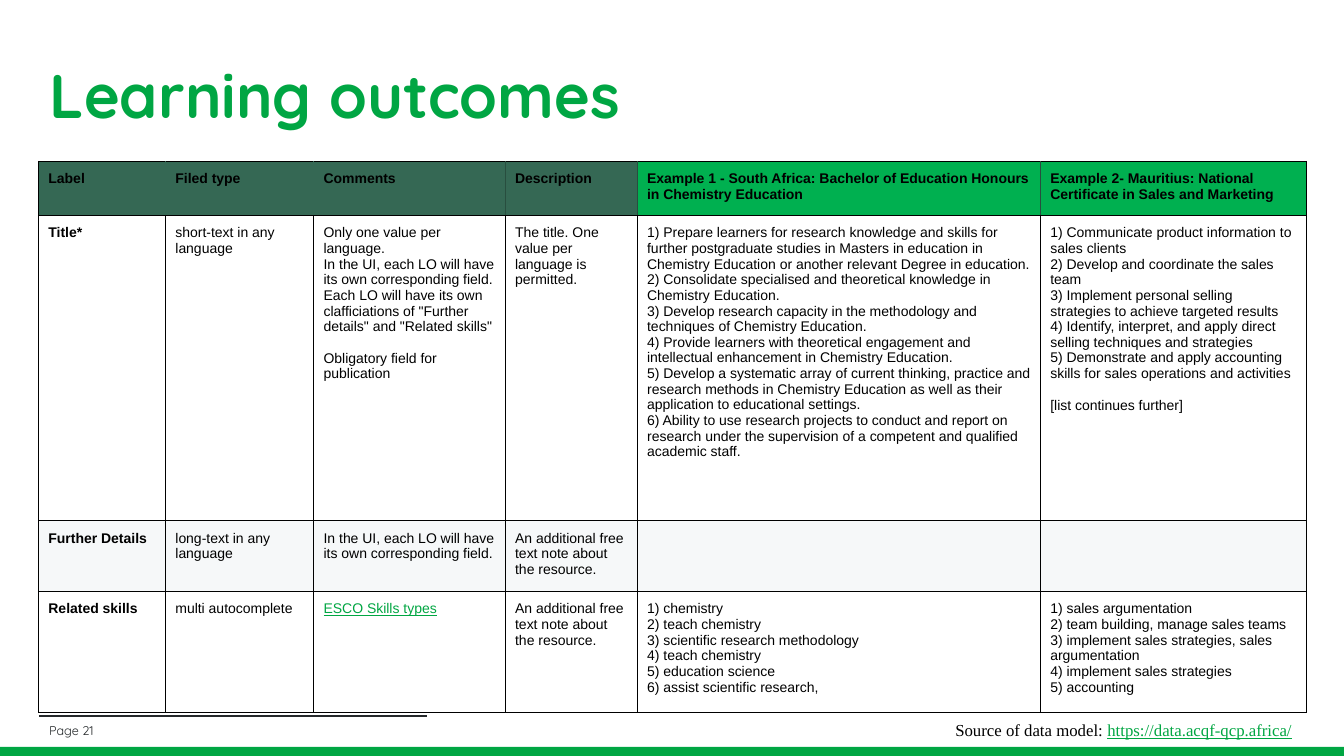
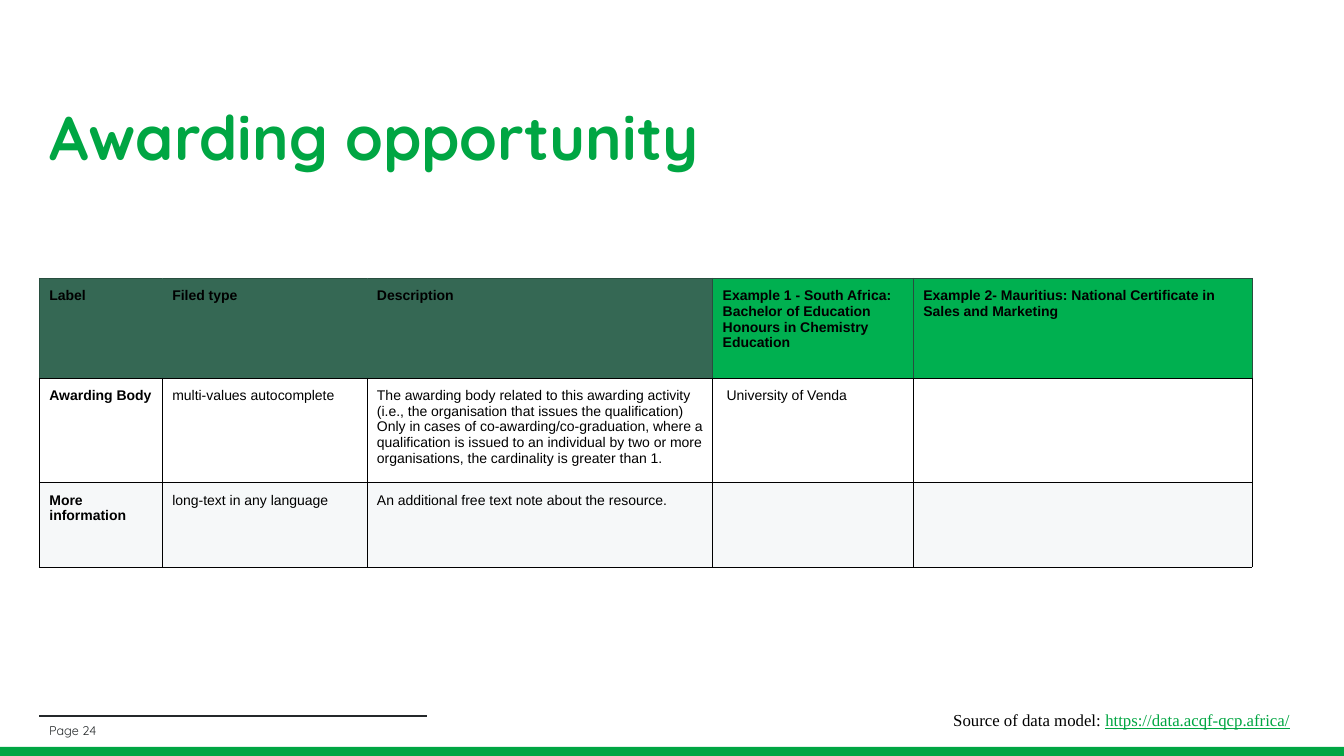
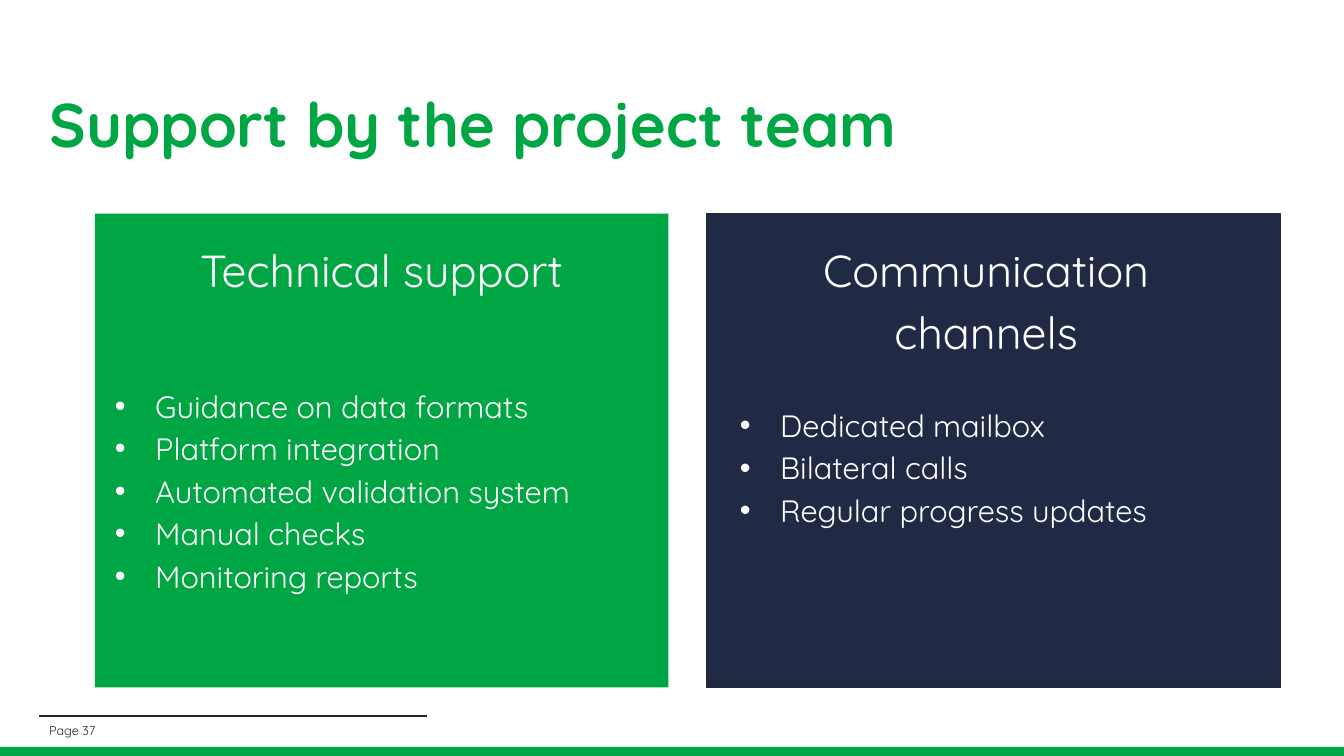
"""Build three slides on a qualification data model and the project team's support."""
from dataclasses import dataclass

import lxml.etree
import pptx
import pptx.dml.color
import pptx.enum.shapes
import pptx.enum.text
import pptx.oxml.ns
import pptx.util

Pt = pptx.util.Pt
RGB = pptx.dml.color.RGBColor.from_string
ALIGN = pptx.enum.text.PP_ALIGN
qn = pptx.oxml.ns.qn


@dataclass(frozen=True)
class Theme:
    green: str = "00A643"
    link: str = "00A642"
    ink: str = "24282A"
    navy: str = "202A44"
    white: str = "FFFFFF"
    black: str = "000000"
    head: str = "356854"
    head_edge: str = "284E3F"
    example: str = "00B050"
    tint: str = "F6F8F9"
    display: str = "Quicksand"
    table: str = "Arial"
    source: str = "Times New Roman"
    title_size: float = 44
    heading_size: float = 32
    list_size: float = 22
    source_size: float = 12
    table_size: float = 10
    page_size: float = 9


theme = Theme()


def style(paragraph, font, size, color, bold=False):
    for run in paragraph.runs:
        run.font.name = font
        run.font.size = Pt(size)
        run.font.bold = bold
        run.font.color.rgb = RGB(color)


def add_border(cell, side, color):
    line = lxml.etree.SubElement(cell._tc.get_or_add_tcPr(), qn(f"a:ln{side}"), w=str(Pt(0.6)))
    fill = lxml.etree.SubElement(line, qn("a:solidFill"))
    lxml.etree.SubElement(fill, qn("a:srgbClr"), val=color)


example_heads = [
    "Example 1 - South Africa: Bachelor of Education Honours in Chemistry Education",
    "Example 2- Mauritius: National Certificate in Sales and Marketing",
]
free_note = "An additional free text note about the resource."
skills_link = "ESCO Skills types"
spaced_notes = ("Obligatory field for publication", "[list continues further]")

table_slides = [
    dict(
        title="Learning outcomes", title_top=31.7, title_height=77, page=21,
        left=27.4, top=115.2, edge=theme.black, source_at=(557.3, 506.9),
        widths=[90.7, 105.9, 136.8, 94.3, 288, 190],
        heights=[38.2, 218.2, 41, 70.6],
        rows=[
            ["Label", "Filed type", "Comments", "Description", *example_heads],
            [
                "Title*",
                "short-text in any language",
                "Only one value per language.\n"
                "In the UI, each LO will have its own corresponding field. Each LO will have its own "
                "clafficiations of \"Further details\" and \"Related skills\"\n"
                "Obligatory field for publication",
                "The title. One value per language is permitted.",
                "1) Prepare learners for research knowledge and skills for further postgraduate studies in "
                "Masters in education in Chemistry Education or another relevant Degree in education.\n"
                "2) Consolidate specialised and theoretical knowledge in Chemistry Education.\n"
                "3) Develop research capacity in the methodology and techniques of Chemistry Education.\n"
                "4) Provide learners with theoretical engagement and intellectual enhancement in "
                "Chemistry Education.\n"
                "5) Develop a systematic array of current thinking, practice and research methods in "
                "Chemistry Education as well as their application to educational settings.\n"
                "6) Ability to use research projects to conduct and report on research under the "
                "supervision of a competent and qualified academic staff.",
                "1) Communicate product information to sales clients\n"
                "2) Develop and coordinate the sales team\n"
                "3) Implement personal selling strategies to achieve targeted results\n"
                "4) Identify, interpret, and apply direct selling techniques and strategies\n"
                "5) Demonstrate and apply accounting skills for sales operations and activities\n"
                "[list continues further]",
            ],
            [
                "Further Details",
                "long-text in any language",
                "In the UI, each LO will have its own corresponding field.",
                free_note, "", "",
            ],
            [
                "Related skills",
                "multi autocomplete",
                skills_link,
                free_note,
                "1) chemistry\n2) teach chemistry\n3) scientific research methodology\n"
                "4) teach chemistry\n5) education science\n6) assist scientific research,",
                "1) sales argumentation\n2) team building, manage sales teams\n"
                "3) implement sales strategies, sales argumentation\n"
                "4) implement sales strategies\n5) accounting",
            ],
        ],
    ),
    dict(
        title="Awarding opportunity", title_top=48.2, title_height=104.4, page=24,
        left=28.1, top=198.7, edge=theme.head_edge, source_at=(555.8, 499.7),
        widths=[87.8, 146.2, 247, 143.3, 241.9],
        heights=[71.3, 60.5, 60.5],
        rows=[
            ["Label", "Filed type", "Description", *example_heads],
            [
                "Awarding Body",
                "multi-values autocomplete",
                "The awarding body related to this awarding activity (i.e., the organisation that issues "
                "the qualification) Only in cases of co-awarding/co-graduation, where a qualification is "
                "issued to an individual by two or more organisations, the cardinality is greater than 1.",
                "University of Venda", "",
            ],
            ["More information", "long-text in any language", free_note, "", ""],
        ],
    ),
]
support = dict(title="Support by the project team", title_top=59, title_height=64.8, page=37)
support_panels = [
    dict(
        heading="Technical support", fill=theme.green, outline=None,
        left=67.7, text_left=67.7, text_width=409.7, gap_lines=2,
        points=["Guidance on data formats", "Platform integration", "Automated validation system",
                "Manual checks", "Monitoring reports"],
    ),
    dict(
        heading="Communication channels", fill=theme.navy, outline=theme.ink,
        left=504.7, text_left=514.1, text_width=380.9, gap_lines=1,
        points=["Dedicated mailbox", "Bilateral calls", "Regular progress updates"],
    ),
]

deck = pptx.Presentation()
deck.slide_width, deck.slide_height = Pt(960), Pt(540)
title_only, two_content = deck.slide_layouts[5], deck.slide_layouts[3]

for content in [*table_slides, support]:
    slide = deck.slides.add_slide(two_content if content is support else title_only)
    title = slide.shapes.title
    title.left, title.top = Pt(28.1), Pt(content["title_top"])
    title.width, title.height = Pt(902.9), Pt(content["title_height"])
    title.text_frame.text = content["title"]
    title.text_frame.auto_size = pptx.enum.text.MSO_AUTO_SIZE.NONE
    title.text_frame.vertical_anchor = pptx.enum.text.MSO_ANCHOR.MIDDLE
    heading = title.text_frame.paragraphs[0]
    heading.alignment = ALIGN.LEFT
    heading.line_spacing = 0.9
    style(heading, theme.display, theme.title_size, theme.green, bold=True)

    page = slide.shapes.add_textbox(Pt(28.1), Pt(514.8), Pt(292.3), Pt(13.7)).text_frame
    page.word_wrap = True
    page.vertical_anchor = pptx.enum.text.MSO_ANCHOR.MIDDLE
    page.text = f"Page {content['page']}"
    style(page.paragraphs[0], theme.display, theme.page_size, theme.ink)

for content, slide in zip(table_slides, deck.slides):
    rows, widths, heights = content["rows"], content["widths"], content["heights"]
    fields = slide.shapes.add_table(
        len(rows), len(widths), Pt(content["left"]), Pt(content["top"]),
        Pt(sum(widths)), Pt(sum(heights))).table
    fields.first_row = fields.horz_banding = False
    for column, width in zip(fields.columns, widths):
        column.width = Pt(width)
    for row, height in zip(fields.rows, heights):
        row.height = Pt(height)

    last = len(widths) - 1
    seams = [content["edge"], *[theme.head] * 2, *[theme.head_edge] * (last - 2), content["edge"]]
    for r, texts in enumerate(rows):
        for c, text in enumerate(texts):
            cell = fields.cell(r, c)
            cell.margin_left = cell.margin_right = cell.margin_top = cell.margin_bottom = Pt(7.2)
            if r == 0:
                borders = [seams[c], seams[c + 1], content["edge"], theme.black]
                fill = theme.example if text in example_heads else theme.head
            else:
                borders = [theme.black] * 4
                fill = theme.white if r % 2 else theme.tint
            for side, color in zip("LRTB", borders):
                add_border(cell, side, color)
            cell.fill.solid()
            cell.fill.fore_color.rgb = RGB(fill)
            if not text:
                continue
            cell.text_frame.text = text
            for paragraph in cell.text_frame.paragraphs:
                if paragraph.text in spaced_notes:
                    paragraph.space_before = Pt(11.3)
                is_link = paragraph.text == skills_link
                style(paragraph, theme.table, theme.table_size,
                      theme.link if is_link else theme.black, bold=r == 0 or c == 0)
                paragraph.runs[0].font.underline = is_link
            if text == "University of Venda":
                cell.margin_left = Pt(10)

    source_left, source_top = content["source_at"]
    source = slide.shapes.add_textbox(Pt(source_left), Pt(source_top), Pt(375.8), Pt(28.8)).text_frame
    source.word_wrap = True
    source.margin_left = source.margin_top = source.margin_bottom = Pt(7.2)
    source.margin_right = Pt(10.2)
    credit = source.paragraphs[0]
    credit.alignment = ALIGN.RIGHT
    for text in ("Source of data model: ", "https://data.acqf-qcp.africa/"):
        credit.add_run().text = text
    style(credit, theme.source, theme.source_size, theme.black)
    credit.runs[1].font.color.rgb = RGB(theme.link)
    credit.runs[1].font.underline = True

support_slide = deck.slides[2]
bodies = [p for p in support_slide.placeholders if p.placeholder_format.idx > 0]
for content, body in zip(support_panels, bodies):
    panel = support_slide.shapes.add_shape(
        pptx.enum.shapes.MSO_SHAPE.RECTANGLE, Pt(content["left"]), Pt(152.6), Pt(409.7), Pt(338.4))
    panel.shadow.inherit = False
    panel.fill.solid()
    panel.fill.fore_color.rgb = RGB(content["fill"])
    if content["outline"]:
        panel.line.color.rgb = RGB(content["outline"])
        panel.line.width = Pt(0.75)
    else:
        panel.line.fill.background()
    support_slide.shapes.title.element.addprevious(panel.element)

    body.left, body.top = Pt(content["text_left"]), Pt(164.2)
    body.width, body.height = Pt(content["text_width"]), Pt(290)
    body.text_frame.text = "\n".join([content["heading"], *content["points"]])
    body.text_frame.auto_size = pptx.enum.text.MSO_AUTO_SIZE.NONE
    for i, paragraph in enumerate(body.text_frame.paragraphs):
        paragraph.line_spacing = 1.15
        paragraph.space_before = Pt(30.4 * content["gap_lines"] if i == 1 else 0)
        paragraph.alignment = ALIGN.LEFT if i else ALIGN.CENTER
        properties = paragraph._p.get_or_add_pPr()
        properties.set("marL", str(Pt(36 if i else 0)))
        properties.set("indent", str(Pt(-28.8 if i else 0)))
        if i == 0:
            lxml.etree.SubElement(properties, qn("a:buNone"))
        style(paragraph, theme.display, theme.list_size if i else theme.heading_size, theme.white)

band = support_slide.shapes.add_shape(
    pptx.enum.shapes.MSO_SHAPE.RECTANGLE, Pt(-2.2), Pt(533.5), Pt(964.8), Pt(9.4))
band.shadow.inherit = False
band.fill.solid()
band.fill.fore_color.rgb = RGB(theme.green)
band.line.fill.background()
footer_rule = support_slide.shapes.add_connector(
    pptx.enum.shapes.MSO_CONNECTOR.STRAIGHT, Pt(28.1), Pt(511.6), Pt(305.3), Pt(511.6))
footer_rule.line.color.rgb = RGB(theme.ink)
footer_rule.line.width = Pt(1.5)
lxml.etree.SubElement(footer_rule.element.spPr, qn("a:effectLst"))
for shared in (band, footer_rule):
    deck.slide_master.shapes.element.append(shared.element)

deck.save("out.pptx")
